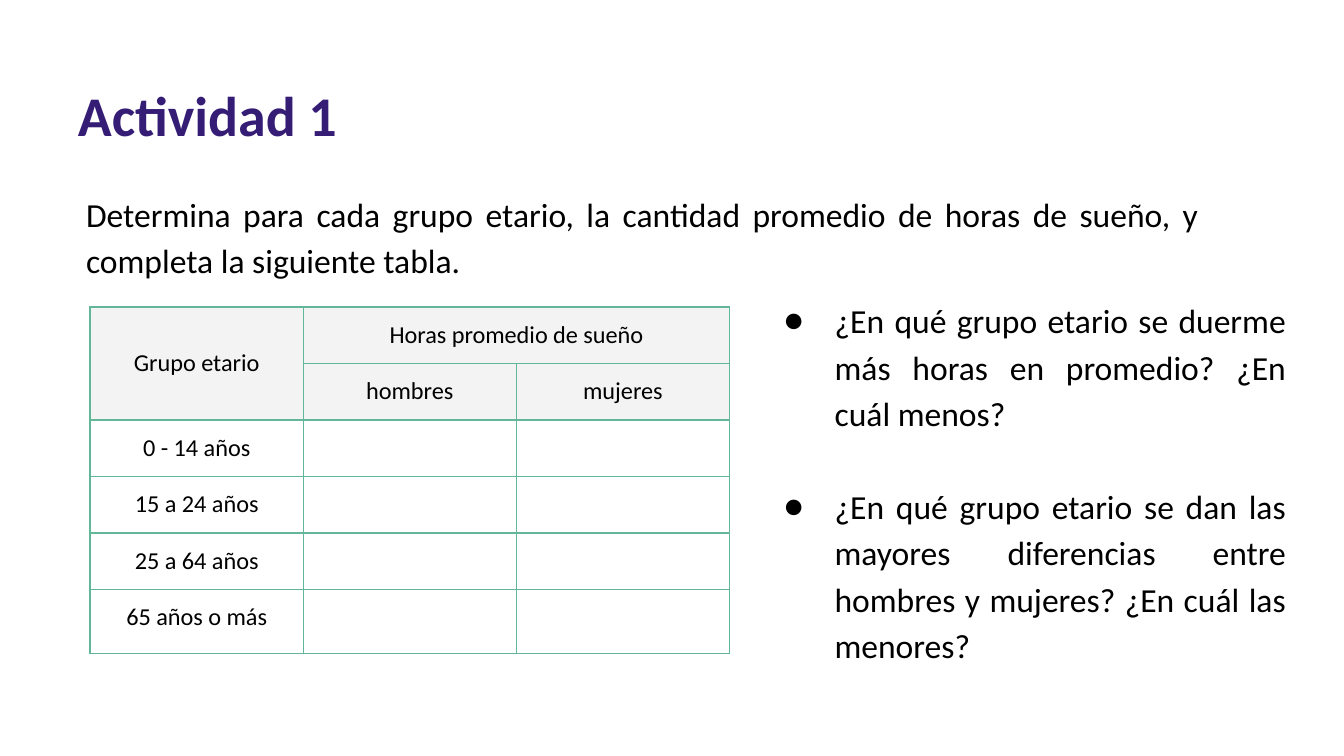
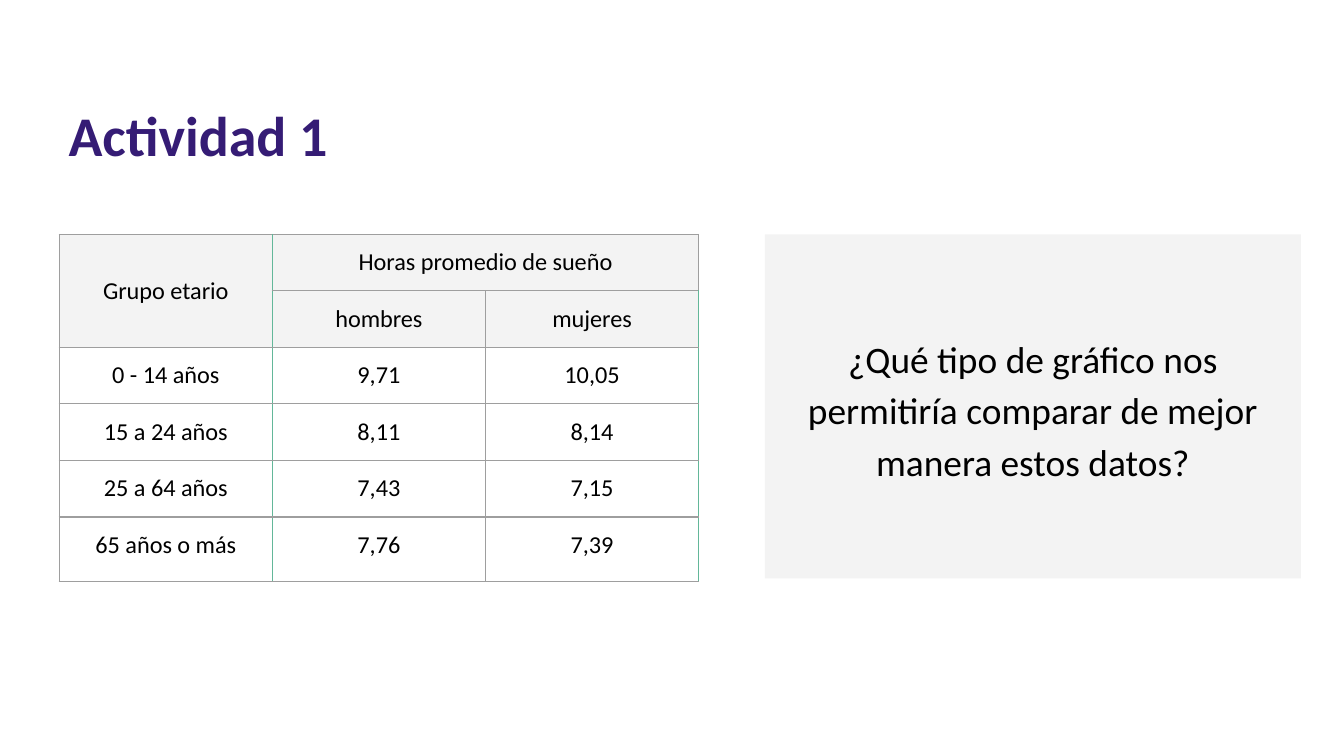
from lxml.etree import SubElement
from pptx import Presentation
from pptx.dml.color import RGBColor
from pptx.enum.shapes import MSO_SHAPE
from pptx.enum.text import MSO_ANCHOR, MSO_AUTO_SIZE, PP_ALIGN
from pptx.oxml.ns import qn
from pptx.util import Inches, Pt

# Shared look
FONT = "Calibri"
PURPLE = RGBColor(0x35, 0x1C, 0x75)
BLACK = RGBColor(0x00, 0x00, 0x00)
PALE = RGBColor(0xF3, 0xF3, 0xF3)
GREEN = RGBColor(0x63, 0xB7, 0x99)
GRAY = RGBColor(0x9E, 0x9E, 0x9E)
SLIDE_WIDTH, SLIDE_HEIGHT = Inches(10), Inches(5.625)
TITLE_ONLY = 5
BODY_SPACING = 1.15

# Table content and grid, in percent of the slide
AGE_GROUPS = ["0 - 14 años", "15 a 24 años", "25 a 64 años", "65 años o más"]
SLEEP_HOURS = [("9,71", "10,05"), ("8,11", "8,14"), ("7,43", "7,15"), ("7,76", "7,39")]
HEADER_ROWS = 2
COLUMN_SHARE = 15.86
ROW_SHARES = [7.4] * 5 + [8.5]
TABLE_SHARE = (3 * COLUMN_SHARE, sum(ROW_SHARES))


def across(percent):
    return round(SLIDE_WIDTH * percent / 100)


def down(percent):
    return round(SLIDE_HEIGHT * percent / 100)


def area(left, top, width, height):
    return across(left), down(top), across(width), down(height)


def add_bullet(paragraph):
    props = paragraph._p.get_or_add_pPr()
    props.set("marL", str(Inches(0.5)))
    props.set("indent", str(-Inches(0.38)))
    color = SubElement(props, qn("a:buClr"))
    SubElement(color, qn("a:srgbClr"), val=str(BLACK))
    SubElement(props, qn("a:buFont"), typeface=FONT)
    SubElement(props, qn("a:buChar"), char="●")


def write(frame, *texts, size, color=BLACK, bold=False, align=PP_ALIGN.LEFT,
          anchor=MSO_ANCHOR.TOP, spacing=1.0, gap=0, bullets=False, inset=0.07):
    """Fill a text frame, one paragraph for each text."""
    frame.word_wrap = True
    frame.auto_size = MSO_AUTO_SIZE.NONE
    frame.vertical_anchor = anchor
    frame.margin_left = frame.margin_right = Inches(inset)
    frame.margin_top = frame.margin_bottom = Inches(inset)
    for number, text in enumerate(texts):
        paragraph = frame.add_paragraph() if number else frame.paragraphs[0]
        if bullets:
            add_bullet(paragraph)
        paragraph.alignment = align
        paragraph.line_spacing = spacing
        paragraph.space_before = Pt(gap if number else 0)
        run = paragraph.add_run()
        run.text = text
        run.font.name, run.font.size = FONT, Pt(size)
        run.font.bold, run.font.color.rgb = bold, color


def add_titled_slide(deck, title, left, top):
    slide = deck.slides.add_slide(deck.slide_layouts[TITLE_ONLY])
    heading = slide.shapes.title
    heading.left, heading.top, heading.width, heading.height = area(left, top, 89.8, 11.7)
    write(heading.text_frame, title, size=30, color=PURPLE, bold=True)
    return slide


def add_text(slide, place, *texts, **style):
    box = slide.shapes.add_textbox(*area(*place))
    write(box.text_frame, *texts, **style)


def add_panel(slide, place, text, **style):
    panel = slide.shapes.add_shape(MSO_SHAPE.RECTANGLE, *area(*place))
    panel.shadow.inherit = False
    panel.fill.solid()
    panel.fill.fore_color.rgb = PALE
    panel.line.fill.background()
    write(panel.text_frame, text, **style)


def set_borders(cell, colors):
    """Draw the left, right, top and bottom edges in the given colours."""
    props = cell._tc.get_or_add_tcPr()
    for place, (side, color) in enumerate(zip("LRTB", colors)):
        edge = SubElement(props, qn(f"a:ln{side}"), w=str(Pt(0.75)))
        fill = SubElement(edge, qn("a:solidFill"))
        SubElement(fill, qn("a:srgbClr"), val=str(color))
        props.insert(place, edge)


def write_cell(cell, text, anchor):
    cell.margin_left = cell.margin_right = Inches(0.1)
    cell.margin_top = cell.margin_bottom = Inches(0.1)
    cell.vertical_anchor = anchor
    paragraph = cell.text_frame.paragraphs[0]
    paragraph.alignment = PP_ALIGN.CENTER
    if text:
        run = paragraph.add_run()
        run.text = text
        run.font.name, run.font.size = FONT, Pt(13)
        run.font.color.rgb = BLACK
    else:  # keeps empty rows as low as filled ones
        SubElement(paragraph._p, qn("a:endParaRPr"), sz="1300")


def add_sleep_table(slide, left, top, hours, upright, level):
    """upright holds the colours of the four vertical rules, level that of the others."""
    rows = [("Grupo etario", "Horas promedio de sueño", ""), ("", "hombres", "mujeres")]
    rows += [(group, *pair) for group, pair in zip(AGE_GROUPS, hours)]
    table = slide.shapes.add_table(len(rows), 3, *area(left, top, *TABLE_SHARE)).table
    table.first_row = table.horz_banding = False
    for column in table.columns:
        column.width = across(COLUMN_SHARE)
    for row, share in zip(table.rows, ROW_SHARES):
        row.height = down(share)
    for r, texts in enumerate(rows):
        for c, text in enumerate(texts):
            cell = table.cell(r, c)
            anchor = MSO_ANCHOR.MIDDLE if (r, c) == (0, 0) else MSO_ANCHOR.TOP
            write_cell(cell, text, anchor)
            if r < HEADER_ROWS:
                cell.fill.solid()
                cell.fill.fore_color.rgb = PALE
            else:
                cell.fill.background()
            set_borders(cell, (upright[c], upright[c + 1], level, level))
    table.cell(0, 0).merge(table.cell(1, 0))
    table.cell(0, 1).merge(table.cell(0, 2))


def build_task(deck):
    slide = add_titled_slide(deck, "Actividad 1", 5.1, 9.4)
    body = dict(size=18, align=PP_ALIGN.JUSTIFY, spacing=BODY_SPACING)
    add_text(slide, (5.7, 23.6, 84.2, 14.2),
             "Determina para cada grupo etario, la cantidad promedio de horas de sueño, "
             "y completa la siguiente tabla.", **body)
    add_sleep_table(slide, 6.7, 40.6, [("", "")] * len(AGE_GROUPS), [GREEN] * 4, GREEN)
    add_text(slide, (56.4, 37.7, 40, 51.4),
             "¿En qué grupo etario se duerme más horas en promedio? ¿En cuál menos?",
             "¿En qué grupo etario se dan las mayores diferencias entre hombres y mujeres? "
             "¿En cuál las menores?", bullets=True, gap=24.8, **body)


def build_results(deck):
    slide = add_titled_slide(deck, "Actividad 1", 4.4, 12.1)
    add_sleep_table(slide, 4.4, 31, SLEEP_HOURS, [GRAY, GREEN, GRAY, GREEN], GRAY)
    add_panel(slide, (56.9, 31, 39.9, TABLE_SHARE[1]),
              "¿Qué tipo de gráfico nos permitiría comparar de mejor manera estos datos?",
              size=20, align=PP_ALIGN.CENTER, anchor=MSO_ANCHOR.MIDDLE, spacing=BODY_SPACING)


def main():
    deck = Presentation()
    deck.slide_width, deck.slide_height = SLIDE_WIDTH, SLIDE_HEIGHT
    build_task(deck)
    build_results(deck)
    deck.save("out.pptx")


if __name__ == "__main__":
    main()
